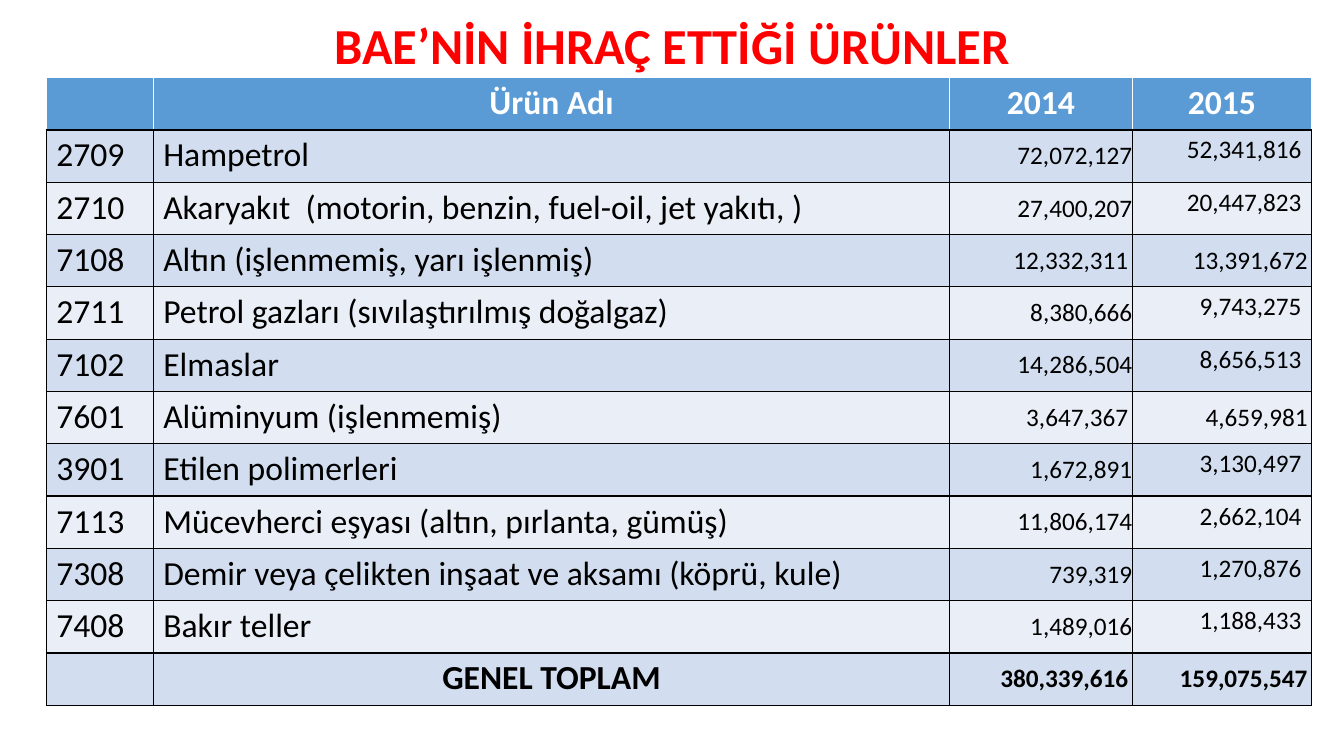
from lxml.etree import SubElement as Sub
from pptx import Presentation
from pptx.dml.color import RGBColor as RGB
from pptx.enum.text import MSO_ANCHOR as Anchor, PP_ALIGN as Align
from pptx.oxml.ns import qn
from pptx.util import Inches, Pt

WIDE, HIGH = 13.33, 7.5
LEFT, TOP, TALL = 0.46, 0.77, 6.23
COLS = [1.06, 7.9, 1.81, 1.78]
BLUE, DARK, PALE = "5B9BD5", "D2DEEF", "EAEFF7"
BLACK, WHITE, RED = "000000", "FFFFFF", "FF0000"

HEAD = ("", "Ürün Adı", "2014", "2015")
GOODS = [
    ("2709", "Hampetrol", "72,072,127", "52,341,816"),
    ("2710", "Akaryakıt  (motorin, benzin, fuel-oil, jet yakıtı, )",
     "27,400,207", "20,447,823"),
    ("7108", "Altın (işlenmemiş, yarı işlenmiş)", "12,332,311", "13,391,672"),
    ("2711", "Petrol gazları (sıvılaştırılmış doğalgaz)",
     "8,380,666", "9,743,275"),
    ("7102", "Elmaslar", "14,286,504", "8,656,513"),
    ("7601", "Alüminyum (işlenmemiş)", "3,647,367", "4,659,981"),
    ("3901", "Etilen polimerleri", "1,672,891", "3,130,497"),
    ("7113", "Mücevherci eşyası (altın, pırlanta, gümüş)",
     "11,806,174", "2,662,104"),
    ("7308", "Demir veya çelikten inşaat ve aksamı (köprü, kule)",
     "739,319", "1,270,876"),
    ("7408", "Bakır teller", "1,489,016", "1,188,433"),
]
TOTAL = ("", "GENEL TOPLAM", "380,339,616", "159,075,547")
INSET = {"7108", "7601", ""}  # codes whose figures have an even margin


def color(code):
    return RGB.from_string(code)


def write(frame, text, size, tint, bold, align):
    frame.text = text
    para = frame.paragraphs[0]
    para.alignment = align
    for run in para.runs:
        font = run.font
        font.name, font.size, font.bold = "Calibri", Pt(size), bold
        font.color.rgb = color(tint)
    return para


def border(cell, sides):
    """Draw a 1 pt line on each side; sides maps L, R, T, B to a colour."""
    props = cell._tc.get_or_add_tcPr()
    for spot, side in enumerate("LRTB"):
        line = Sub(props, qn("a:ln" + side), w=str(Pt(1)))
        fill = Sub(line, qn("a:solidFill"))
        Sub(fill, qn("a:srgbClr"), val=sides[side])
        props.insert(spot, line)


def paint(cell, fill, sides):
    cell.fill.solid()
    cell.fill.fore_color.rgb = color(fill)
    border(cell, sides)


def pad(cell, gap):
    cell.vertical_anchor = Anchor.MIDDLE
    cell.margin_left = cell.margin_right = Inches(gap)
    cell.margin_top = cell.margin_bottom = Inches(gap)


def add_title(slide, text):
    box = slide.shapes.add_textbox(
        Inches(0.92), Inches(0.19), Inches(11.5), Inches(0.58))
    frame = box.text_frame
    frame.word_wrap = True
    frame.vertical_anchor = Anchor.MIDDLE
    write(frame, text, 36, RED, True, Align.CENTER).line_spacing = 0.9


def fill_head(table):
    sides = {"L": WHITE, "R": WHITE, "T": WHITE, "B": BLACK}
    for cell, text in zip(table.rows[0].cells, HEAD):
        write(cell.text_frame, text, 24, WHITE, True, Align.CENTER)
        paint(cell, BLUE, sides)


def fill_row(table, row, texts):
    last = texts is TOTAL
    even = texts[0] in INSET
    for col, text in enumerate(texts):
        cell = table.cell(row, col)
        figure = col > 1
        align = (Align.RIGHT if figure
                 else Align.CENTER if last else Align.LEFT)
        write(cell.text_frame, text, 18 if figure else 24, BLACK, last, align)
        if figure and even:
            pad(cell, 0.04)
        elif col == 2:
            pad(cell, 0)
        paint(cell, DARK if row % 2 else PALE, dict.fromkeys("LRTB", BLACK))


def add_grid(slide):
    body = GOODS + [TOTAL]
    count = len(body) + 1
    table = slide.shapes.add_table(
        count, len(COLS), Inches(LEFT), Inches(TOP),
        Inches(sum(COLS)), Inches(TALL)).table
    for col, width in zip(table.columns, COLS):
        col.width = Inches(width)
    for row in table.rows:
        row.height = Inches(TALL / count)
    fill_head(table)
    for row, texts in enumerate(body, 1):
        fill_row(table, row, texts)


def main():
    deck = Presentation()
    deck.slide_width, deck.slide_height = Inches(WIDE), Inches(HIGH)
    slide = deck.slides.add_slide(deck.slide_layouts[6])
    add_title(slide, "BAE’NİN İHRAÇ ETTİĞİ ÜRÜNLER")
    add_grid(slide)
    deck.save("out.pptx")


if __name__ == "__main__":
    main()
